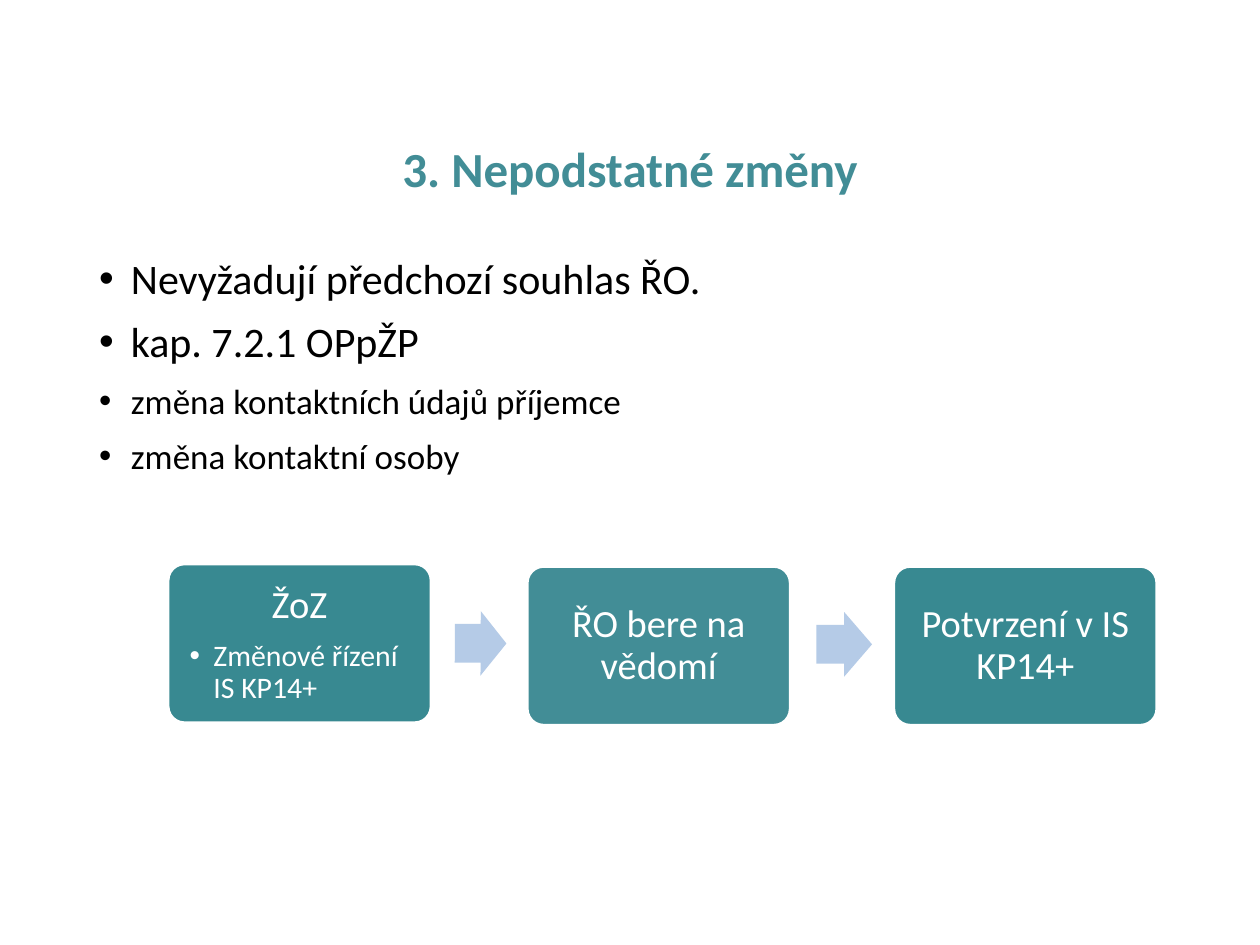
from pptx import Presentation
from pptx.dml.color import RGBColor
from pptx.enum.shapes import MSO_SHAPE
from pptx.enum.text import MSO_ANCHOR, PP_ALIGN
from pptx.oxml.ns import qn
from pptx.util import Cm, Pt
from lxml import etree

ROUND, ARROW = MSO_SHAPE.ROUNDED_RECTANGLE, MSO_SHAPE.RIGHT_ARROW
TOP, MID = MSO_ANCHOR.TOP, MSO_ANCHOR.MIDDLE
LEFT, CENTER, FULL = PP_ALIGN.LEFT, PP_ALIGN.CENTER, PP_ALIGN.JUSTIFY

FONT = "Calibri"
HUE = {"teal": "428D96", "deep": "388991", "pale": "B5CBE7",
       "white": "FFFFFF", "black": "000000"}

TITLE = "3. Nepodstatné změny"
POINTS = [
    ("Nevyžadují předchozí souhlas ŘO.", 24),
    ("kap. 7.2.1 OPpŽP", 24),
    ("změna kontaktních údajů příjemce", 20),
    ("změna kontaktní osoby", 20),
]
STEPS = [
    {"x": 3.4, "y": 11.38, "hue": "deep", "head": "ŽoZ",
     "note": "Změnové řízení IS KP14+"},
    {"x": 10.64, "y": 11.43, "hue": "teal", "head": "ŘO bere na vědomí"},
    {"x": 18.03, "y": 11.43, "hue": "deep", "head": "Potvrzení v IS KP14+"},
]
ARROWS = [(9.17, 12.32, 1.04, 0.3), (16.46, 12.34, 1.12, 0)]
EDGE, WIDE = 1.75, 21.9
CARD_W, CARD_H, PAD = 5.28, 3.18, 0.33
ARROW_H = 1.3


def color(key):
    return RGBColor.from_string(HUE[key])


def write(frame, text, size=22, hue="white", bold=False, align=CENTER,
          before=0, after=0, hang=0):
    first = not frame.paragraphs[0].runs
    para = frame.paragraphs[0] if first else frame.add_paragraph()
    para.alignment = align
    para.line_spacing = 0.9
    para.space_before = Pt(0 if first else before)
    para.space_after = Pt(after)
    if hang:
        props = para._p.get_or_add_pPr()
        props.set("marL", str(Cm(hang)))
        props.set("indent", str(-Cm(hang)))
        etree.SubElement(props, qn("a:buFont")).set("typeface", "Arial")
        etree.SubElement(props, qn("a:buChar")).set("char", "•")
    run = para.add_run()
    run.text = text
    run.font.name = FONT
    run.font.size = Pt(size)
    run.font.bold = bold
    run.font.color.rgb = color(hue)


def add_box(slide, x, y, w, h, anchor):
    frame = slide.shapes.add_textbox(Cm(x), Cm(y), Cm(w), Cm(h)).text_frame
    frame.word_wrap = True
    frame.vertical_anchor = anchor
    return frame


def add_form(slide, kind, x, y, w, h, hue):
    form = slide.shapes.add_shape(kind, Cm(x), Cm(y), Cm(w), Cm(h))
    form.shadow.inherit = False
    form.fill.solid()
    form.fill.fore_color.rgb = color(hue)
    form.line.fill.background()
    return form


def add_card(slide, step):
    card = add_form(slide, ROUND, step["x"], step["y"], CARD_W, CARD_H, step["hue"])
    card.adjustments[0] = 0.1
    card.line.color.rgb = color("white")
    card.line.width = Pt(1)
    frame = card.text_frame
    frame.word_wrap = True
    frame.margin_left = frame.margin_right = Cm(PAD)
    frame.margin_top = frame.margin_bottom = Cm(PAD)
    note = step.get("note")
    frame.vertical_anchor = TOP if note else MID
    write(frame, step["head"], after=7.7 if note else 0)
    if note:
        write(frame, note, size=17, align=LEFT, hang=0.48)


def main():
    deck = Presentation()
    deck.slide_width, deck.slide_height = Cm(25.4), Cm(19.05)
    slide = deck.slides.add_slide(deck.slide_layouts[6])

    write(add_box(slide, EDGE, 2.2, WIDE, 2.5, MID), TITLE,
          size=28, hue="teal", bold=True)
    body = add_box(slide, EDGE, 5.08, WIDE, 11.13, TOP)
    for text, size in POINTS:
        write(body, text, size=size, hue="black", align=FULL, before=10, hang=0.64)

    for step in STEPS:
        add_card(slide, step)
    for x, y, w, turn in ARROWS:
        arrow = add_form(slide, ARROW, x, y, w, ARROW_H, "pale")
        arrow.adjustments[0] = 0.6
        arrow.adjustments[1] = 0.5
        arrow.rotation = turn

    deck.save("out.pptx")


if __name__ == "__main__":
    main()
